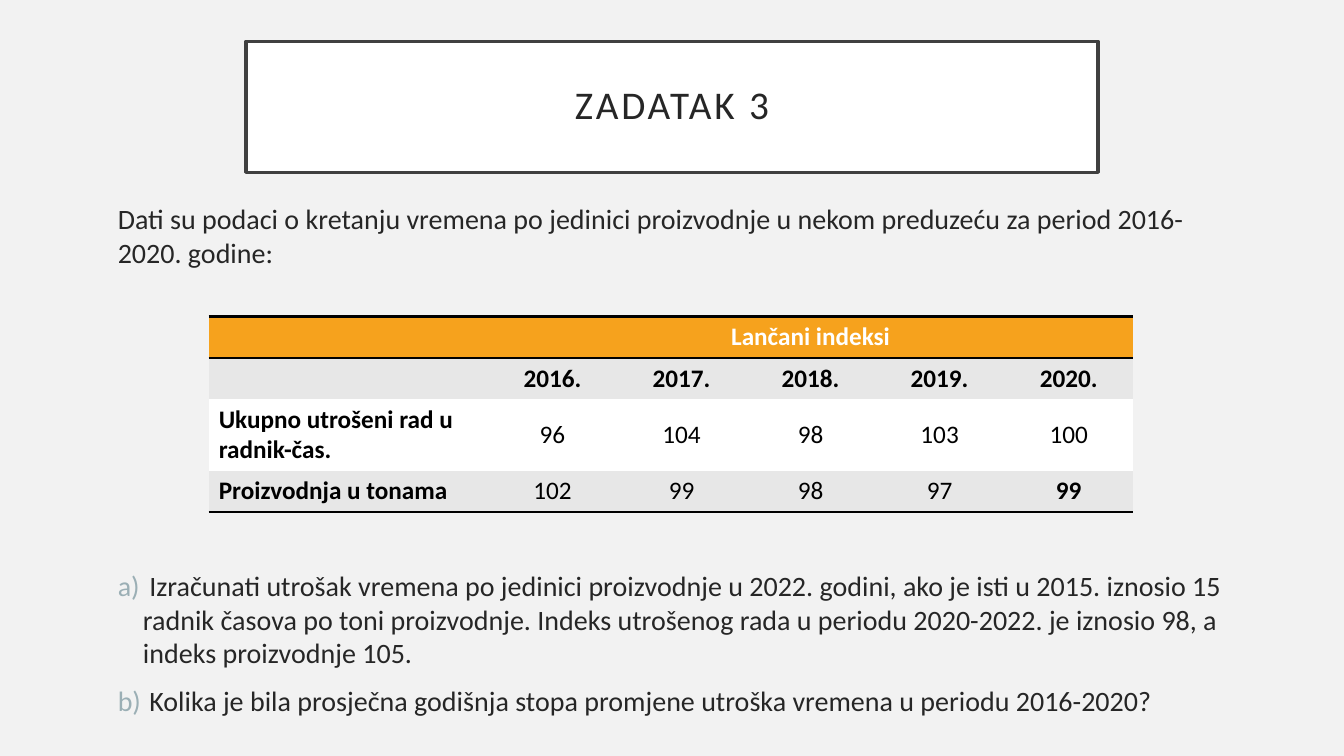
from lxml import etree
from pptx import Presentation
from pptx.dml.color import RGBColor
from pptx.enum import shapes, text
from pptx.oxml import ns
from pptx.util import Inches, Pt

# Content
TITLE = "ZADATAK 3"
INTRO = ("Dati su podaci o kretanju vremena po jedinici proizvodnje u nekom "
         "preduzeću za period 2016-2020. godine:")
TASKS = [
    " Izračunati utrošak vremena po jedinici proizvodnje u 2022. godini, ako je "
    "isti u 2015. iznosio 15 radnik časova po toni proizvodnje. Indeks utrošenog "
    "rada u periodu 2020-2022. je iznosio 98, a indeks proizvodnje 105.",
    " Kolika je bila prosječna godišnja stopa promjene utroška vremena u periodu "
    "2016-2020?",
]
ROWS = [
    ["", "Lančani indeksi", "", "", "", ""],
    ["", "2016.", "2017.", "2018.", "2019.", "2020."],
    ["Ukupno utrošeni rad u radnik-čas.", "96", "104", "98", "103", "100"],
    ["Proizvodnja u tonama", "102", "99", "98", "97", "99"],
]
THEME = {
    "font": "Calibri", "title": 28, "body": 20, "cell": 18,
    "back": "F2F2F2", "white": "FFFFFF", "frame": "404040", "ink": "262626",
    "black": "000000", "head": "F6A21D", "band": "E7E7E7", "mark": "9BAFB5",
}
WIDTHS = [2.77] + [1.28] * 5
HEIGHTS = [0.41, 0.41, 0.71, 0.41]
FILLS = ["head", "band", "white", "band"]
EDGES = {0: ("lnT", "lnB"), 3: ("lnB",)}


def color(name):
    return RGBColor.from_string(THEME[name])


def style(par, size, ink, bold=False):
    for run in par.runs:
        font = run.font
        font.name, font.size, font.bold = THEME["font"], Pt(THEME[size]), bold
        font.color.rgb = color(ink)


def add(parent, tag, **attrs):
    node = etree.SubElement(parent, ns.qn(tag))
    for key, value in attrs.items():
        node.set(key, str(value))
    return node


def body(slide, top, height, lines):
    frame = slide.shapes.add_textbox(
        Inches(1.07), Inches(top), Inches(11.2), Inches(height)).text_frame
    frame.word_wrap = True
    frame.text = "\n".join(lines)
    for par in frame.paragraphs:
        style(par, "body", "ink")
    return frame.paragraphs


def letter(par):
    props = par._p.get_or_add_pPr()
    props.set("marL", str(Inches(0.25)))
    props.set("indent", str(-Inches(0.25)))
    add(add(props, "a:buClr"), "a:srgbClr", val=THEME["mark"])
    add(props, "a:buFont", typeface=THEME["font"])
    add(props, "a:buAutoNum", type="alphaLcParenR")


def edge(cell, side):
    line = add(cell._tc.get_or_add_tcPr(), "a:" + side, w=Pt(2))
    add(add(line, "a:solidFill"), "a:srgbClr", val=THEME["black"])


def main():
    deck = Presentation()
    deck.slide_width, deck.slide_height = Inches(13.33), Inches(7.5)
    slide = deck.slides.add_slide(deck.slide_layouts[6])
    slide.background.fill.solid()
    slide.background.fill.fore_color.rgb = color("back")

    # Title frame
    box = slide.shapes.add_shape(shapes.MSO_SHAPE.RECTANGLE, Inches(2.44),
                                 Inches(0.41), Inches(8.45), Inches(1.3))
    box.shadow.inherit = False
    box.fill.solid()
    box.fill.fore_color.rgb = color("white")
    box.line.color.rgb = color("frame")
    box.line.width = Pt(2.5)
    box.text_frame.text = TITLE
    box.text_frame.vertical_anchor = text.MSO_ANCHOR.MIDDLE
    par = box.text_frame.paragraphs[0]
    par.alignment = text.PP_ALIGN.CENTER
    par.line_spacing = 0.9
    style(par, "title", "ink")
    par.runs[0].font._element.set("spc", "200")

    # Intro and lettered tasks
    body(slide, 1.95, 0.8, [INTRO])
    for i, par in enumerate(body(slide, 5.59, 1.72, TASKS)):
        letter(par)
        if i:
            par.space_before = Pt(10)

    # Index table
    grid = slide.shapes.add_table(
        len(ROWS), len(WIDTHS), Inches(2.07), Inches(3.14),
        Inches(sum(WIDTHS)), Inches(sum(HEIGHTS))).table
    plain = "{2D5ABB26-0587-4C30-8999-92F81FD0307C}"
    grid._tbl.tblPr.find(ns.qn("a:tableStyleId")).text = plain
    for col, width in zip(grid.columns, WIDTHS):
        col.width = Inches(width)
    for r, row in enumerate(ROWS):
        grid.rows[r].height = Inches(HEIGHTS[r])
        for c, words in enumerate(row):
            cell = grid.cell(r, c)
            for side in EDGES.get(r, ()):
                edge(cell, side)
            cell.fill.solid()
            cell.fill.fore_color.rgb = color(FILLS[r])
            cell.vertical_anchor = text.MSO_ANCHOR.MIDDLE
            cell.text = words
            par = cell.text_frame.paragraphs[0]
            if c:
                par.alignment = text.PP_ALIGN.CENTER
            last = (r, c) == (len(ROWS) - 1, len(WIDTHS) - 1)
            style(par, "cell", "black" if r else "white",
                  r < 2 or c == 0 or last)
    grid.cell(0, 1).merge(grid.cell(0, 5))

    deck.save("out.pptx")


if __name__ == "__main__":
    main()
